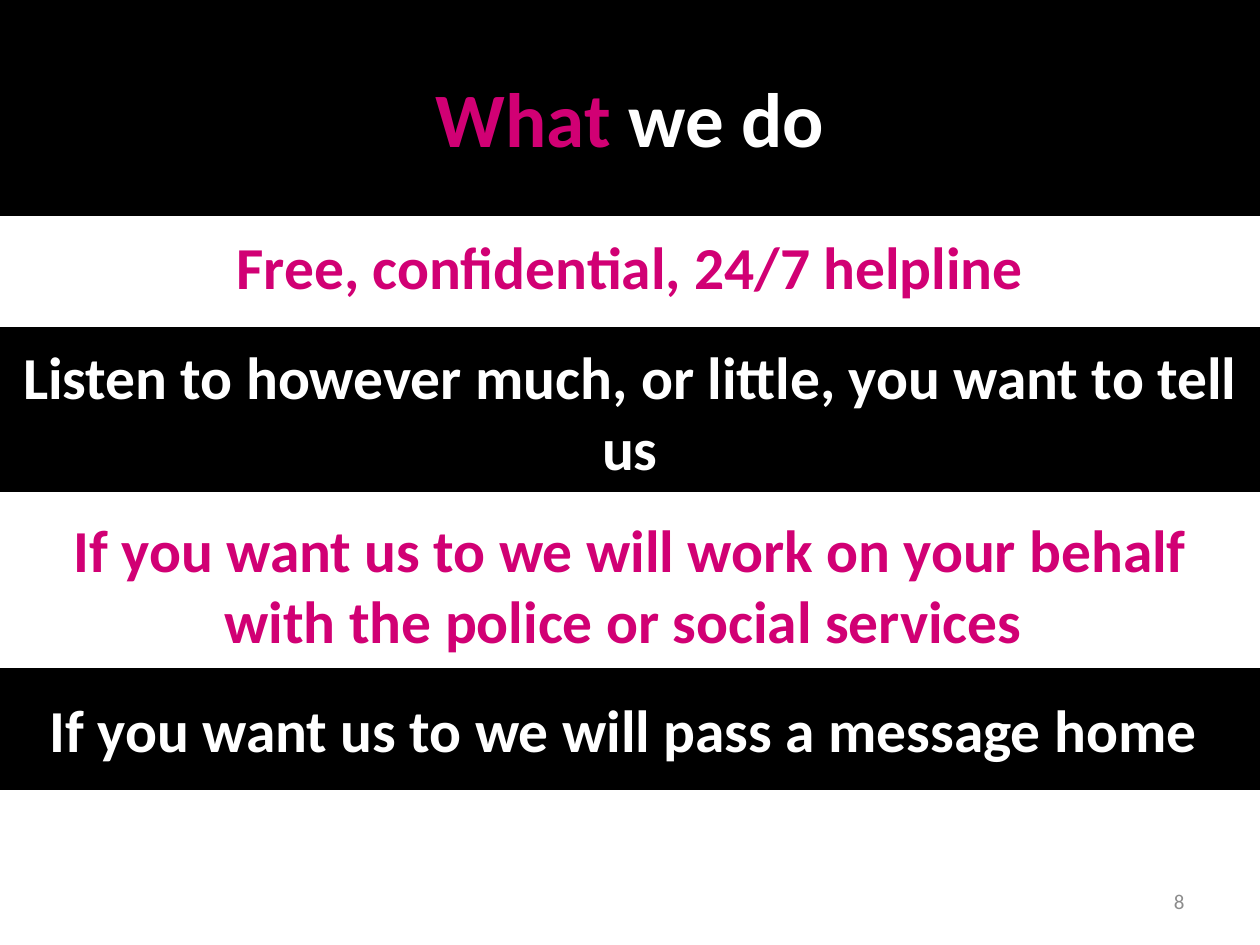
from dataclasses import dataclass

from pptx import Presentation
from pptx.dml.color import RGBColor
from pptx.enum.shapes import MSO_SHAPE
from pptx.enum.text import MSO_ANCHOR as Anchor, PP_ALIGN as Align
from pptx.shapes.autoshape import Shape
from pptx.slide import Slide
from pptx.text.text import _Paragraph as Paragraph
from pptx.util import Pt

BLACK = RGBColor(0x00, 0x00, 0x00)
WHITE = RGBColor(0xFF, 0xFF, 0xFF)
PINK = RGBColor(0xD1, 0x00, 0x74)
GREY = RGBColor(0x8C, 0x8C, 0x8C)

SLIDE_WIDTH, SLIDE_HEIGHT = 720, 540
STATEMENT_FORMAT = {"name": "Calibri", "size": Pt(34), "bold": True}
TITLE_FORMAT = {"name": "Calibri", "size": Pt(44), "bold": True}
NUMBER_FORMAT = {"name": "Calibri", "size": Pt(12)}


@dataclass(frozen=True)
class Band:
    """A black stripe across the slide."""
    top: float
    height: float


@dataclass(frozen=True)
class Statement:
    """A full-width centred line of text."""
    text: str
    top: float
    height: float
    color: RGBColor


HEADER = Band(0, 122.4)
BANDS = [Band(187.9, 92.2), Band(383, 67.7)]

STATEMENTS = [
    Statement("Free, confidential, 24/7 helpline", 128.2, 53.3, PINK),
    Statement("Listen to however much, or little, you want to tell us",
              190.8, 89.3, WHITE),
    Statement("If you want us to we will work on your behalf "
              "with the police or social services ", 289.4, 90, PINK),
    Statement("If you want us to we will pass a message home ",
              392.4, 94.3, WHITE),
]


def add_run(paragraph: Paragraph, text: str, formats: dict,
            color: RGBColor) -> None:
    run = paragraph.add_run()
    run.text = text
    for attribute, value in formats.items():
        setattr(run.font, attribute, value)
    run.font.color.rgb = color


def add_band(slide: Slide, band: Band) -> Shape:
    shape = slide.shapes.add_shape(
        MSO_SHAPE.RECTANGLE, 0, Pt(band.top), Pt(SLIDE_WIDTH), Pt(band.height))
    shape.shadow.inherit = False
    shape.fill.solid()
    shape.fill.fore_color.rgb = BLACK
    shape.line.color.rgb = BLACK
    shape.line.width = Pt(2)
    return shape


def add_statement(slide: Slide, statement: Statement) -> None:
    box = slide.shapes.add_textbox(
        0, Pt(statement.top), Pt(SLIDE_WIDTH), Pt(statement.height))
    box.text_frame.word_wrap = True
    paragraph = box.text_frame.paragraphs[0]
    paragraph.alignment = Align.CENTER
    add_run(paragraph, statement.text, STATEMENT_FORMAT, statement.color)


def format_title(slide: Slide) -> None:
    title = slide.shapes.title
    title.left, title.top = Pt(36), Pt(21.6)
    title.width, title.height = Pt(648), Pt(90)
    title.text_frame.vertical_anchor = Anchor.MIDDLE
    paragraph = title.text_frame.paragraphs[0]
    paragraph.alignment = Align.CENTER
    add_run(paragraph, "What", TITLE_FORMAT, PINK)
    add_run(paragraph, " we do", TITLE_FORMAT, WHITE)


def add_slide_number(slide: Slide, number: str) -> None:
    box = slide.shapes.add_textbox(Pt(516), Pt(500.5), Pt(168), Pt(28.75))
    box.text_frame.word_wrap = True
    box.text_frame.vertical_anchor = Anchor.MIDDLE
    paragraph = box.text_frame.paragraphs[0]
    paragraph.alignment = Align.RIGHT
    add_run(paragraph, number, NUMBER_FORMAT, GREY)


def main() -> None:
    presentation = Presentation()
    presentation.slide_width = Pt(SLIDE_WIDTH)
    presentation.slide_height = Pt(SLIDE_HEIGHT)
    slide = presentation.slides.add_slide(presentation.slide_layouts[5])

    # Header band, placed behind the title
    header = add_band(slide, HEADER)
    slide.shapes.title.element.addprevious(header.element)
    format_title(slide)

    # Black stripes, then the statements on top
    for band in BANDS:
        add_band(slide, band)
    for statement in STATEMENTS:
        add_statement(slide, statement)

    # Footer
    add_slide_number(slide, "8")
    presentation.save("out.pptx")


if __name__ == "__main__":
    main()
